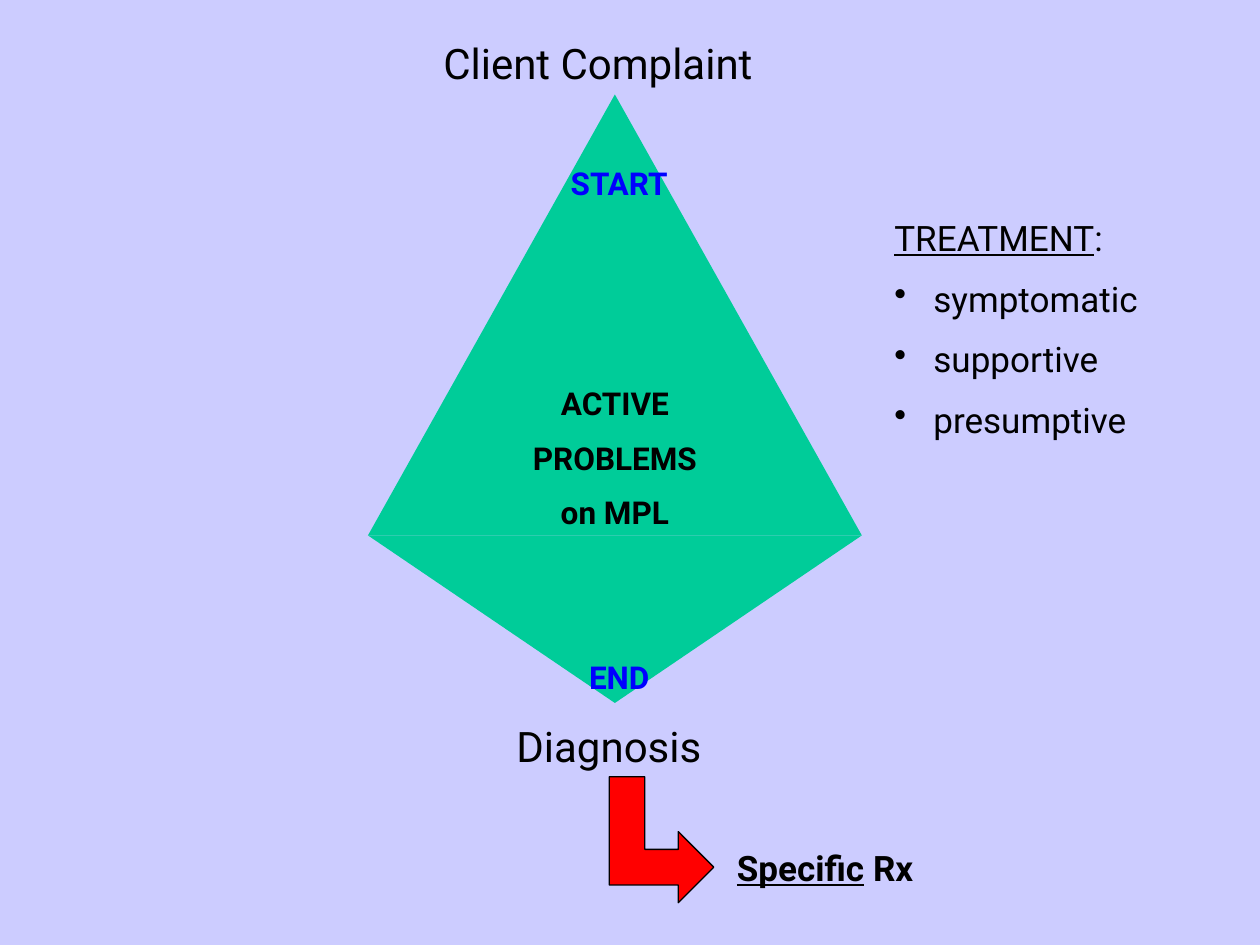
from dataclasses import dataclass

from lxml import etree
from pptx import Presentation
from pptx.dml.color import RGBColor as Rgb
from pptx.enum import shapes, text
from pptx.oxml import ns
from pptx.util import Inches, Pt


@dataclass(frozen=True)
class Theme:
    font: str = "Roboto"
    back: Rgb = Rgb(0xCC, 0xCC, 0xFF)
    kite: Rgb = Rgb(0x00, 0xCC, 0x99)
    arrow: Rgb = Rgb(0xFF, 0x00, 0x00)
    ink: Rgb = Rgb(0x00, 0x00, 0x00)
    mark: Rgb = Rgb(0x00, 0x00, 0xFF)
    head: int = 24
    body: int = 20
    label: int = 18
    gap: float = 0.53
    indent: float = 0.31


THEME = Theme()
KIND = shapes.MSO_SHAPE


def add_text(slide, box, lines, size, color=THEME.ink, bold=False, center=False):
    frame = slide.shapes.add_textbox(*map(Inches, box)).text_frame
    frame.word_wrap = True
    frame.auto_size = text.MSO_AUTO_SIZE.SHAPE_TO_FIT_TEXT
    for row, line in enumerate(lines):
        para = frame.add_paragraph() if row else frame.paragraphs[0]
        para.text = line
        para.alignment = text.PP_ALIGN.CENTER if center else text.PP_ALIGN.LEFT
        if row:
            para.space_before = Pt(round(size * THEME.gap, 1))
        font = para.font
        font.name, font.size, font.bold = THEME.font, Pt(size), bold
        font.color.rgb = color
    return frame.paragraphs


def add_under(para, tail):
    para.runs[0].font.underline = True
    para.add_run().text = tail


def add_bullet(para):
    props = para._p.get_or_add_pPr()
    props.set("marL", str(Inches(THEME.indent)))
    props.set("indent", str(-Inches(THEME.indent)))
    mark = etree.Element(ns.qn("a:buChar"), char="•")
    rest = props.find(ns.qn("a:defRPr"))
    rest.addprevious(mark)


def add_shape(slide, kind, box, fill, line=None):
    shape = slide.shapes.add_shape(kind, *map(Inches, box))
    shape.shadow.inherit = False
    shape.fill.solid()
    shape.fill.fore_color.rgb = fill
    if line is None:
        shape.line.fill.background()
    else:
        shape.line.color.rgb = line
        shape.line.width = Pt(0.75)
    return shape


def add_kite(slide):
    left, mid, width = 2.92, 4.25, 3.92
    low = add_shape(slide, KIND.ISOSCELES_TRIANGLE, (left, mid, width, 1.33), THEME.kite)
    low._element.spPr.xfrm.set("flipV", "1")
    add_shape(slide, KIND.ISOSCELES_TRIANGLE, (left, 0.75, width, mid - 0.75), THEME.kite)


def add_arrow(slide):
    arrow = add_shape(slide, KIND.BENT_UP_ARROW, (4.75, 6.25, 1, 0.83),
                      THEME.arrow, THEME.ink)
    arrow.rotation = 90
    for spot, value in enumerate((0.34, 0.34, 0.34)):
        arrow.adjustments[spot] = value


def main():
    deck = Presentation()
    deck.slide_width, deck.slide_height = Inches(10), Inches(7.5)
    slide = deck.slides.add_slide(deck.slide_layouts[6])
    slide.background.fill.solid()
    slide.background.fill.fore_color.rgb = THEME.back

    add_text(slide, (4, 5.67, 1.75, 0.5), ["Diagnosis"], THEME.head)
    add_kite(slide)
    add_text(slide, (3.42, 0.25, 2.92, 0.5), ["Client Complaint"], THEME.head)
    add_text(slide, (3.92, 3, 1.92, 1.3), ["ACTIVE", "PROBLEMS", "on MPL"],
             THEME.label, bold=True, center=True)
    add_arrow(slide)

    cure = add_text(slide, (5.75, 6.67, 2.75, 0.43), ["Specific"], THEME.body, bold=True)
    add_under(cure[0], " Rx")
    care = add_text(slide, (7, 1.67, 2.33, 1.93),
                    ["TREATMENT", "symptomatic", "supportive", "presumptive"], THEME.body)
    add_under(care[0], ":")
    for para in care[1:]:
        add_bullet(para)

    for word, top in (("START", 1.25), ("END", 5.17)):
        add_text(slide, (4.25, top, 1.33, 0.4), [word], THEME.label,
                 THEME.mark, bold=True, center=True)
    deck.save("out.pptx")


if __name__ == "__main__":
    main()
